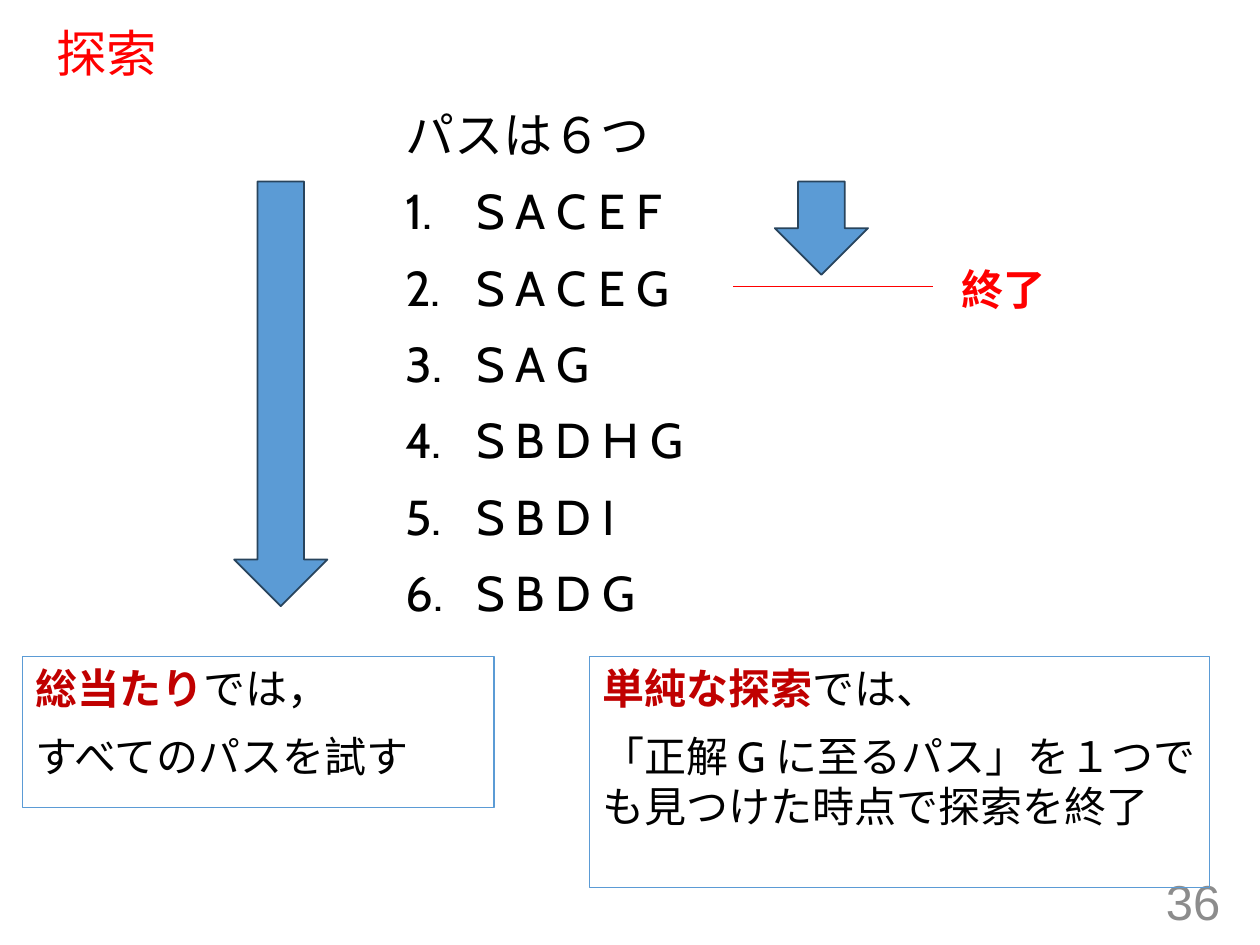
from dataclasses import dataclass

from lxml import etree
from pptx import Presentation
from pptx.dml.color import RGBColor as RGB
from pptx.enum.shapes import MSO_CONNECTOR as CONN, MSO_SHAPE as SHAPE
from pptx.enum.text import MSO_ANCHOR as ANCHOR, MSO_AUTO_SIZE as FIT, PP_ALIGN as ALIGN
from pptx.oxml.ns import qn
from pptx.util import Cm, Pt


@dataclass(frozen=True)
class Theme:
    black: str = "000000"
    red: str = "FF0000"
    dark_red: str = "C00000"
    blue: str = "5B9BD5"
    navy: str = "28445D"
    gray: str = "8C8C8C"
    head: float = 28.8
    large: float = 28
    body: float = 24


T = Theme()
BODY = dict(name="Cabin", size=T.body, color=T.black, bold=False)
STRONG = BODY | dict(color=T.dark_red, bold=True)
LIST = BODY | dict(size=T.large)


def add_run(p, text, fmt):
    r = p.add_run()
    r.text = text
    for key, value in fmt.items():
        if key == "color":
            r.font.color.rgb = RGB.from_string(value)
        else:
            setattr(r.font, key, Pt(value) if key == "size" else value)
    # East Asian glyphs use the same typeface
    etree.SubElement(r.font._element, qn("a:ea"), typeface=fmt["name"])


def fill_text(tf, paragraphs, **frame):
    for key, value in (dict(word_wrap=True, vertical_anchor=ANCHOR.TOP) | frame).items():
        setattr(tf, key, value)
    for i, runs in enumerate(paragraphs):
        p = tf.add_paragraph() if i else tf.paragraphs[0]
        p.alignment = ALIGN.LEFT
        if i:
            p.space_before = Pt(10)
        for text, fmt in runs:
            add_run(p, text, fmt)


prs = Presentation()
prs.slide_width, prs.slide_height = Cm(25.4), Cm(19.05)
s = prs.slides.add_slide(prs.slide_layouts[6])

# Slide number
tf = s.shapes.add_textbox(Cm(19.13), Cm(17.65), Cm(5.72), Cm(1.02)).text_frame
number = dict(name="Arial", size=T.large, color=T.gray)
fill_text(tf, [[("36", number)]], vertical_anchor=ANCHOR.MIDDLE)
tf.paragraphs[0].alignment = ALIGN.RIGHT

# Numbered list of paths
paths = ["S A C E F", "S A C E G", "S A G", "S B D H G", "S B D I", "S B D G"]
tf = s.shapes.add_textbox(Cm(7.92), Cm(1.98), Cm(9.58), Cm(11.25)).text_frame
fill_text(tf, [[(text, LIST)] for text in ["パスは６つ", *paths]])
for p in tf.paragraphs[1:]:
    pPr = p._p.get_or_add_pPr()
    pPr.set("marL", str(Cm(1.43)))
    pPr.set("indent", str(-Cm(1.43)))
    etree.SubElement(pPr, qn("a:buFont"), typeface="Cabin")
    etree.SubElement(pPr, qn("a:buAutoNum"), type="arabicPeriod")

# Title
tf = s.shapes.add_textbox(Cm(0.89), Cm(0.48), Cm(23.5), Cm(1.3)).text_frame
title = dict(name="Arial", size=T.head, color=T.red)
fill_text(tf, [[("探索", title)]], vertical_anchor=ANCHOR.MIDDLE)
tf.paragraphs[0].line_spacing = 0.9

# Explanation boxes
notes = [
    (0.46, 9.5, 3.05, "総当たり", "では，", "すべてのパスを試す"),
    (11.89, 12.5, 4.67, "単純な探索", "では、",
     "「正解 G に至るパス」を１つでも見つけた時点で探索を終了"),
]
for x, w, h, term, rest, detail in notes:
    sp = s.shapes.add_shape(SHAPE.RECTANGLE, Cm(x), Cm(13.23), Cm(w), Cm(h))
    sp.shadow.inherit = False
    sp.fill.background()
    sp.line.color.rgb = RGB.from_string(T.blue)
    sp.line.width = Pt(0.75)
    fill_text(sp.text_frame, [[(term, STRONG), (rest, BODY)], [(detail, BODY)]])

# Search progress arrows
for x, h in [(4.72, 8.56), (15.62, 1.88)]:
    sp = s.shapes.add_shape(SHAPE.DOWN_ARROW, Cm(x), Cm(3.66), Cm(1.88), Cm(h))
    sp.shadow.inherit = False
    sp.fill.solid()
    sp.fill.fore_color.rgb = RGB.from_string(T.blue)
    sp.line.color.rgb = RGB.from_string(T.navy)
    sp.line.width = Pt(1)

# Stop line and its label
stop = s.shapes.add_connector(CONN.STRAIGHT, Cm(14.78), Cm(5.77), Cm(18.8), Cm(5.77))
stop.line.color.rgb = RGB.from_string(T.red)
stop.line.width = Pt(0.5)
etree.SubElement(stop._element.spPr, qn("a:effectLst"))

tf = s.shapes.add_textbox(Cm(19.13), Cm(5.18), Cm(2.24), Cm(1.27)).text_frame
label = dict(name="Calibri", size=T.body, color=T.red, bold=True)
fill_text(tf, [[("終了", label)]], word_wrap=False, auto_size=FIT.SHAPE_TO_FIT_TEXT)

prs.save("out.pptx")
